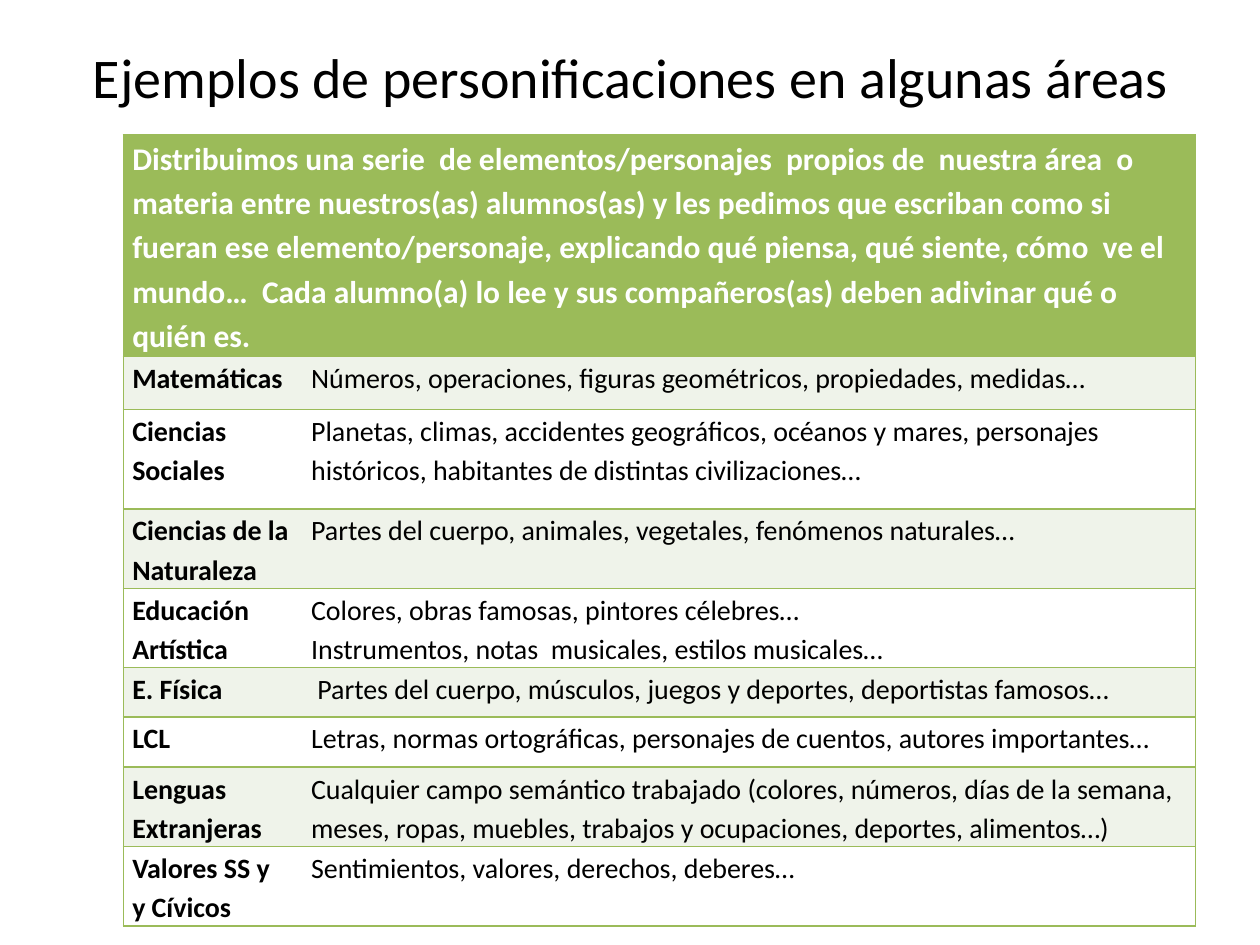
from pptx import Presentation
from pptx.dml.color import RGBColor
from pptx.enum.text import MSO_ANCHOR, PP_ALIGN
from pptx.oxml.ns import qn
from pptx.util import Inches, Pt
from lxml.etree import SubElement

GREEN, PALE, WHITE, BLACK = "9BBB59", "EFF3EA", "FFFFFF", "000000"
TITLE = "Ejemplos de personificaciones en algunas áreas"
INTRO = (
    "Distribuimos una serie  de elementos/personajes  propios de  nuestra área  o "
    "materia entre nuestros(as) alumnos(as) y les pedimos que escriban como si "
    "fueran ese elemento/personaje, explicando qué piensa, qué siente, cómo  ve el "
    "mundo…  Cada alumno(a) lo lee y sus compañeros(as) deben adivinar qué o quién es."
)
AREAS = [
    ("Matemáticas", ["Números, operaciones, figuras geométricos, propiedades, medidas…"], 0.42),
    ("Ciencias Sociales", ["Planetas, climas, accidentes geográficos, océanos y mares, personajes "
                           "históricos, habitantes de distintas civilizaciones…"], 0.79),
    ("Ciencias de la Naturaleza", ["Partes del cuerpo, animales, vegetales, fenómenos naturales…"], 0.63),
    ("Educación Artística", ["Colores, obras famosas, pintores célebres…",
                             "Instrumentos, notas  musicales, estilos musicales…"], 0.63),
    ("E. Física", [" Partes del cuerpo, músculos, juegos y deportes, deportistas famosos…"], 0.39),
    ("LCL", ["Letras, normas ortográficas, personajes de cuentos, autores importantes…"], 0.4),
    ("Lenguas Extranjeras", ["Cualquier campo semántico trabajado (colores, números, días de la semana, "
                             "meses, ropas, muebles, trabajos y ocupaciones, deportes, alimentos…)"], 0.63),
    ("Valores SS y  y Cívicos", ["Sentimientos, valores, derechos, deberes…"], 0.63),
]


def color(value):
    return RGBColor.from_string(value)


def add_run(p, text, size, value, bold=False):
    r = p.add_run()
    r.text = text
    r.font.name = "Calibri"
    r.font.size = Pt(size)
    r.font.bold = bold
    r.font.color.rgb = color(value)


def set_borders(cell, sides):
    tc_pr = cell._tc.get_or_add_tcPr()
    for side in "LRTB":
        ln = SubElement(tc_pr, qn(f"a:ln{side}"), w=str(Pt(1)))
        if side in sides:
            fill = SubElement(ln, qn("a:solidFill"))
            SubElement(fill, qn("a:srgbClr"), val=GREEN)
        else:
            SubElement(ln, qn("a:noFill"))


def format_cell(cell, fill, sides):
    set_borders(cell, sides)
    cell.fill.solid()
    cell.fill.fore_color.rgb = color(fill)
    cell.margin_left = cell.margin_right = Inches(0.07)
    cell.margin_top = cell.margin_bottom = 0


def write_cell(cell, lines, size, value, bold=False):
    tf = cell.text_frame
    for i, line in enumerate(lines):
        p = tf.add_paragraph() if i else tf.paragraphs[0]
        p.line_spacing = 1.15
        add_run(p, line, size, value, bold)


def add_title(s):
    sp = s.shapes.title
    sp.left, sp.top, sp.width, sp.height = map(Inches, (0.51, 0.13, 9, 0.95))
    tf = sp.text_frame
    tf.vertical_anchor = MSO_ANCHOR.MIDDLE
    p = tf.paragraphs[0]
    p.alignment = PP_ALIGN.CENTER
    add_run(p, TITLE, 32, BLACK)


def add_areas_table(s):
    heights = [1.76] + [height for _, _, height in AREAS]
    widths = [1.42, 7.09]
    table = s.shapes.add_table(len(heights), 2, Inches(0.98), Inches(1.07),
                               Inches(sum(widths)), Inches(sum(heights))).table
    table.first_row = table.horz_banding = False
    for column, width in zip(table.columns, widths):
        column.width = Inches(width)
    for row, height in zip(table.rows, heights):
        row.height = Inches(height)

    header, hidden = table.cell(0, 0), table.cell(0, 1)
    header.merge(hidden)
    for cell in (header, hidden):
        format_cell(cell, GREEN, "LRTB")
    write_cell(header, [INTRO], 18, WHITE, True)

    for i, (area, examples, _) in enumerate(AREAS, 1):
        fill = PALE if i % 2 else WHITE
        name, detail = table.cell(i, 0), table.cell(i, 1)
        format_cell(name, fill, "LTB")
        format_cell(detail, fill, "RTB")
        write_cell(name, [area], 16, BLACK, True)
        write_cell(detail, examples, 16, BLACK)


def main():
    prs = Presentation()
    prs.slide_width, prs.slide_height = Inches(10), Inches(7.5)
    s = prs.slides.add_slide(prs.slide_layouts[5])
    add_title(s)
    add_areas_table(s)
    prs.save("out.pptx")


if __name__ == "__main__":
    main()
